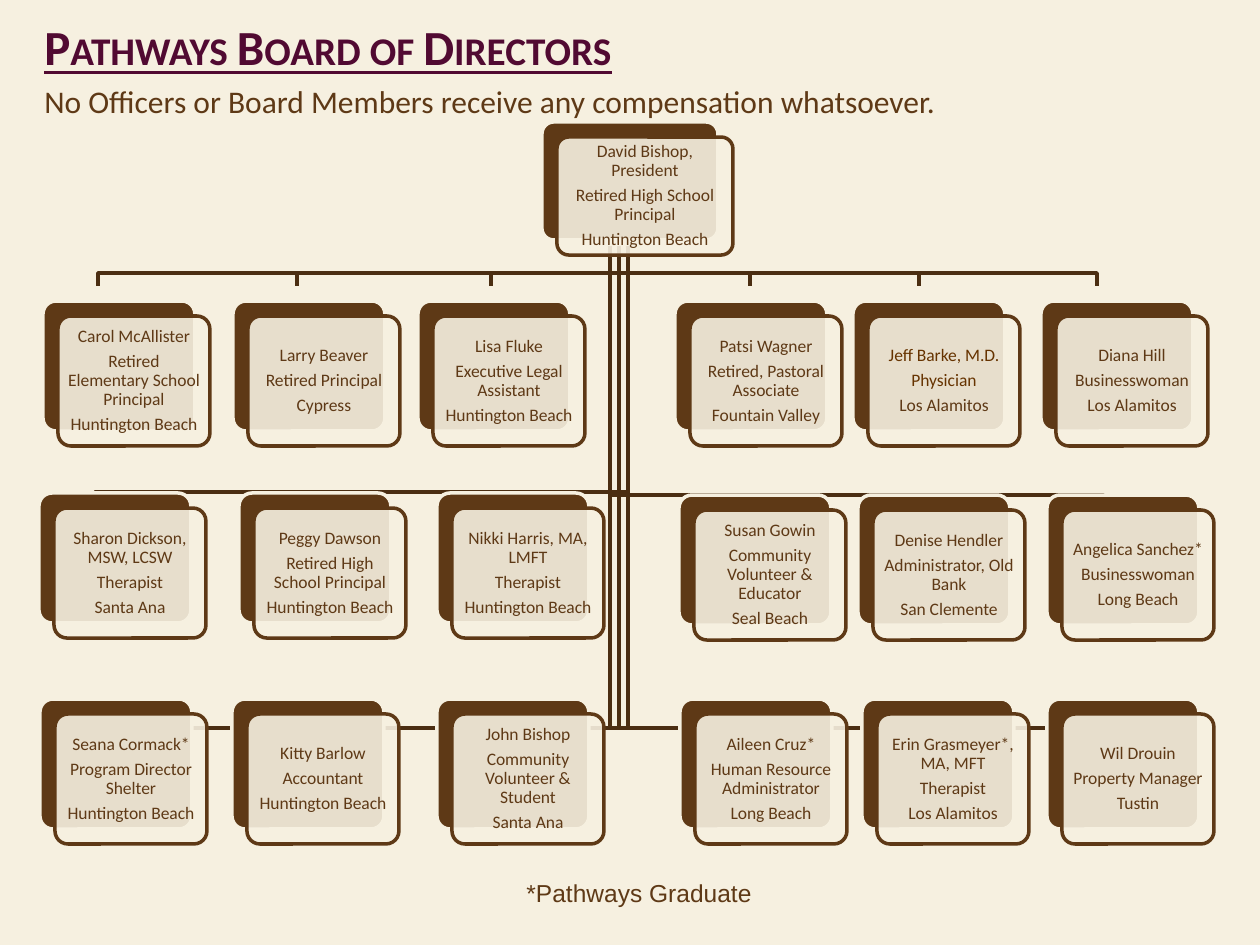
from typing import NamedTuple

from lxml.etree import SubElement
from pptx import Presentation
from pptx.dml.color import RGBColor
from pptx.enum.shapes import MSO_SHAPE
from pptx.enum.text import MSO_ANCHOR, PP_ALIGN
from pptx.oxml.ns import qn
from pptx.util import Emu, Pt

SCALE = 914400 / 126
SHIFT, DROP = 15, 13
CARD = (152, 130)
TRUNK = (610, 619, 628, 628, 619, 610)
INK = {"cream": "F6F0E0", "brown": "5E3916", "rust": "663300",
       "line": "4B2E12", "plum": "510A32"}


class Person(NamedTuple):
    left: int
    tip: int
    name: str
    job: str
    town: str
    tint: str = "brown"


class Row(NamedTuple):
    start: int
    bus: tuple[int, int]
    tops: tuple[int, int]
    team: tuple[Person, ...]


HEAD = Person(542, 619, "David Bishop, President",
              "Retired High School Principal", "Huntington Beach")
ROWS = (
    Row(246, (273, 273), (301, 301), (
        Person(43, 98, "Carol McAllister",
               "Retired Elementary School Principal", "Huntington Beach"),
        Person(233, 297, "Larry Beaver", "Retired Principal", "Cypress"),
        Person(418, 491, "Lisa Fluke", "Executive Legal Assistant",
               "Huntington Beach"),
        Person(675, 750, "Patsi Wagner", "Retired, Pastoral Associate",
               "Fountain Valley"),
        Person(853, 919, "Jeff Barke, M.D.", "Physician", "Los Alamitos",
               "rust"),
        Person(1041, 1097, "Diana Hill", "Businesswoman", "Los Alamitos"))),
    Row(275, (492, 495), (493, 495), (
        Person(39, 95, "Sharon Dickson, MSW, LCSW", "Therapist", "Santa Ana"),
        Person(239, 304, "Peggy Dawson", "Retired High School Principal",
               "Huntington Beach"),
        Person(437, 512, "Nikki Harris, MA, LMFT", "Therapist",
               "Huntington Beach"),
        Person(679, 753, "Susan Gowin", "Community Volunteer & Educator",
               "Seal Beach"),
        Person(858, 924, "Denise Hendler", "Administrator, Old Bank",
               "San Clemente"),
        Person(1047, 1103, "Angelica Sanchez*", "Businesswoman",
               "Long Beach"))),
    Row(304, (728, 728), (699, 699), (
        Person(40, 96, "Seana Cormack*", "Program Director Shelter",
               "Huntington Beach"),
        Person(232, 296, "Kitty Barlow", "Accountant", "Huntington Beach"),
        Person(437, 512, "John Bishop", "Community Volunteer & Student",
               "Santa Ana"),
        Person(680, 755, "Aileen Cruz*", "Human Resource Administrator",
               "Long Beach"),
        Person(862, 927, "Erin Grasmeyer*, MA, MFT", "Therapist",
               "Los Alamitos"),
        Person(1047, 1103, "Wil Drouin", "Property Manager", "Tustin"))),
)


def px(size: int) -> Emu:
    return Emu(round(size * SCALE))


def ink(name: str) -> RGBColor:
    return RGBColor.from_string(INK[name])


def style(run, size: int, tint: str, face: str = "Calibri") -> None:
    run.font.size = Pt(size)
    run.font.name = face
    run.font.color.rgb = ink(tint)


def link(slide, trunk: int, start: int, bus: int, tip: int) -> None:
    pen = slide.shapes.build_freeform(trunk, start, scale=SCALE)
    pen.add_line_segments([(trunk, bus), (tip, bus), (tip, bus + DROP)],
                          close=False)
    path = pen.convert_to_shape()
    path.shadow.inherit = False
    path.fill.background()
    path.line.color.rgb = ink("line")
    path.line.width = Pt(2)


def plate(slide, left: int, top: int, size: tuple[int, int],
          fill: str, edge: str):
    box = slide.shapes.add_shape(MSO_SHAPE.ROUNDED_RECTANGLE,
                                 px(left), px(top), px(size[0]), px(size[1]))
    box.shadow.inherit = False
    box.adjustments[0] = 0.1
    box.fill.solid()
    box.fill.fore_color.rgb = ink(fill)
    box.line.color.rgb = ink(edge)
    box.line.width = Pt(2)
    return box


def card(slide, who: Person, top: int, size: tuple[int, int] = CARD) -> None:
    plate(slide, who.left, top, size, "brown", "cream")
    face = plate(slide, who.left + SHIFT, top + SHIFT, size, "cream", "brown")
    shade = face.fill._xPr.find(qn("a:solidFill"))[0]
    SubElement(shade, qn("a:alpha")).set("val", "90000")
    frame = face.text_frame
    frame.word_wrap = True
    frame.vertical_anchor = MSO_ANCHOR.MIDDLE
    frame.margin_left = frame.margin_right = px(5)
    frame.margin_top = frame.margin_bottom = 0
    frame.text = "\n".join((who.name, who.job, who.town))
    for para, tint in zip(frame.paragraphs, (who.tint, who.tint, "brown")):
        para.alignment = PP_ALIGN.CENTER
        para.line_spacing = 0.9
        para.space_after = Pt(3.5)
        style(para.runs[0], 10, tint)


def label(slide, left: int, top: int, wide: int, high: int, text: str):
    box = slide.shapes.add_textbox(px(left), px(top), px(wide), px(high))
    box.text_frame.word_wrap = True
    box.text_frame.text = text
    return box.text_frame


def title(slide) -> None:
    frame = label(slide, 32, 0, 1071, 126,
                  "Pathways Board of Directors\nNo Officers or Board Members "
                  "receive any compensation whatsoever.")
    frame.vertical_anchor = MSO_ANCHOR.BOTTOM
    top, sub = frame.paragraphs
    top.space_before, sub.space_before = Pt(5.6), Pt(3.6)
    run = top.runs[0]
    style(run, 28, "plum")
    run.font.bold = run.font.underline = True
    run.font._rPr.set("cap", "small")
    style(sub.runs[0], 18, "brown")


def main() -> None:
    """Build the board of directors chart."""
    deck = Presentation()
    deck.slide_width, deck.slide_height = px(1260), px(945)
    slide = deck.slides.add_slide(deck.slide_layouts[6])
    slide.background.fill.solid()
    slide.background.fill.fore_color.rgb = ink("cream")
    title(slide)
    for row in reversed(ROWS):
        for spot, who in enumerate(row.team):
            link(slide, TRUNK[spot], row.start, row.bus[spot // 3], who.tip)
    card(slide, HEAD, 122, (176, 118))
    for row in ROWS:
        for spot, who in enumerate(row.team):
            card(slide, who, row.tops[spot // 3])
    note = label(slide, 514, 872, 410, 43, "*Pathways Graduate")
    style(note.paragraphs[0].runs[0], 14, "brown", "Arial")
    deck.save("out.pptx")


if __name__ == "__main__":
    main()
